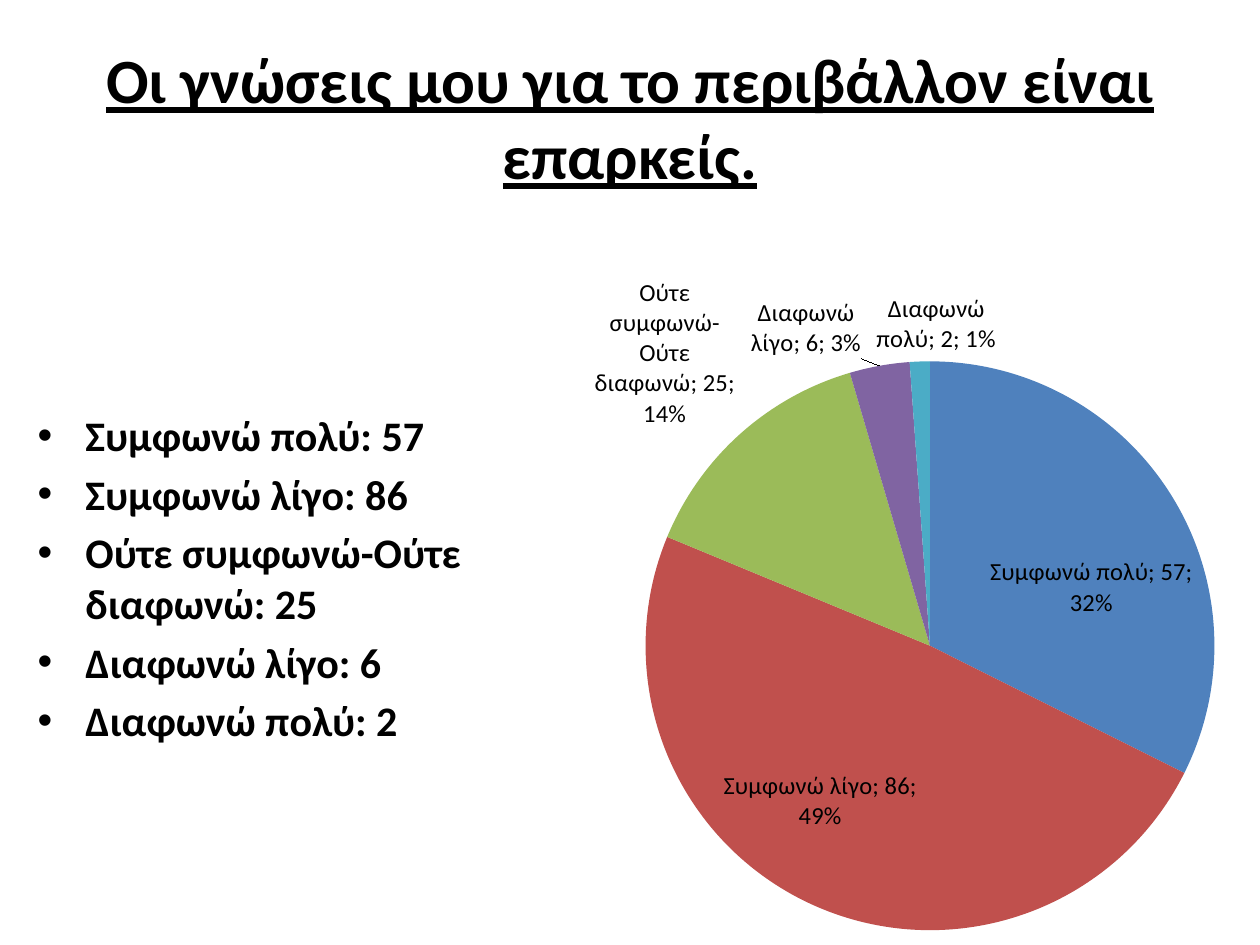
from dataclasses import dataclass

import pptx
import pptx.chart.data
import pptx.dml.color
import pptx.enum.chart
import pptx.enum.text
import pptx.oxml
import pptx.oxml.ns
import pptx.util
from pptx.util import Inches

FONT = "Calibri"
BLACK = "000000"
TITLE = "Οι γνώσεις μου για το περιβάλλον είναι επαρκείς."


@dataclass
class Answer:
    label: str
    count: int
    color: str


ANSWERS = [
    Answer("Συμφωνώ πολύ", 57, "4F81BD"),
    Answer("Συμφωνώ λίγο", 86, "C0504D"),
    Answer("Ούτε συμφωνώ-Ούτε διαφωνώ", 25, "9BBB59"),
    Answer("Διαφωνώ λίγο", 6, "8064A2"),
    Answer("Διαφωνώ πολύ", 2, "4BACC6"),
]


def rgb(color: str) -> pptx.dml.color.RGBColor:
    return pptx.dml.color.RGBColor.from_string(color)


def format_font(font, size: int, bold: bool = False) -> None:
    font.name = FONT
    font.size = pptx.util.Pt(size)
    font.bold = bold
    font.color.rgb = rgb(BLACK)


def add_title(slide) -> None:
    title = slide.shapes.title
    title.left, title.top = Inches(0.5), Inches(0.3)
    title.width, title.height = Inches(9), Inches(1.25)
    title.text_frame.text = TITLE
    title.text_frame.vertical_anchor = pptx.enum.text.MSO_ANCHOR.MIDDLE
    paragraph = title.text_frame.paragraphs[0]
    paragraph.alignment = pptx.enum.text.PP_ALIGN.CENTER
    font = paragraph.runs[0].font
    format_font(font, 36, bold=True)
    font.underline = True


def add_answer_list(slide, answers: list[Answer]) -> None:
    box = slide.shapes.add_textbox(Inches(0.2), Inches(3.2), Inches(4.11), Inches(3.18))
    text_frame = box.text_frame
    text_frame.word_wrap = True
    text_frame.text = "\n".join(f"{answer.label}: {answer.count}" for answer in answers)
    for paragraph in text_frame.paragraphs:
        paragraph.space_before = pptx.util.Pt(4.8)
        format_font(paragraph.runs[0].font, 24, bold=True)
        # Hanging bullet
        properties = paragraph._p.get_or_add_pPr()
        properties.set("marL", str(Inches(0.38)))
        properties.set("indent", str(-Inches(0.38)))
        for tag, name, value in (("a:buFont", "typeface", "Arial"), ("a:buChar", "char", "•")):
            bullet = pptx.oxml.parse_xml(f'<{tag} {pptx.oxml.ns.nsdecls("a")} {name}="{value}"/>')
            properties.append(bullet)


def set_plot_area(chart, x: float, y: float, width: float, height: float) -> None:
    """Fix the inner plot area, in fractions of the chart."""
    plot_area = chart._chartSpace.chart.plotArea
    for old_layout in plot_area.findall(pptx.oxml.ns.qn("c:layout")):
        plot_area.remove(old_layout)
    sizes = "".join(
        f'<c:{name} val="{value}"/>'
        for name, value in (("x", x), ("y", y), ("w", width), ("h", height))
    )
    plot_area.insert(0, pptx.oxml.parse_xml(
        f'<c:layout {pptx.oxml.ns.nsdecls("c")}><c:manualLayout>'
        '<c:layoutTarget val="inner"/><c:xMode val="edge"/><c:yMode val="edge"/>'
        f"{sizes}</c:manualLayout></c:layout>"
    ))


def add_answer_pie(slide, answers: list[Answer]) -> None:
    data = pptx.chart.data.CategoryChartData()
    data.categories = [answer.label for answer in answers]
    data.add_series("Series 1", [answer.count for answer in answers])
    chart = slide.shapes.add_chart(
        pptx.enum.chart.XL_CHART_TYPE.PIE,
        Inches(3.98), Inches(1.78), Inches(6.02), Inches(5.72), data,
    ).chart
    chart.has_legend = False
    chart.has_title = False
    format_font(chart.font, 10)
    set_plot_area(chart, 0.19, 0.19, 0.75, 0.79)

    # Slice colours
    plot = chart.plots[0]
    plot.vary_by_categories = True
    for index, answer in enumerate(answers):
        fill = plot.series[0].points[index].format.fill
        fill.solid()
        fill.fore_color.rgb = rgb(answer.color)

    # Labels: category; value; percentage
    labels = plot.series[0].data_labels
    labels.show_category_name = True
    labels.show_value = True
    labels.show_percentage = True
    labels.position = pptx.enum.chart.XL_LABEL_POSITION.BEST_FIT
    format_font(labels.font, 14)
    separator = pptx.oxml.parse_xml(
        f'<c:separator {pptx.oxml.ns.nsdecls("c")}>; </c:separator>'
    )
    labels._element.find(pptx.oxml.ns.qn("c:showBubbleSize")).addnext(separator)


def main() -> None:
    presentation = pptx.Presentation()
    presentation.slide_width, presentation.slide_height = Inches(10), Inches(7.5)
    slide = presentation.slides.add_slide(presentation.slide_layouts[5])
    add_title(slide)
    add_answer_list(slide, ANSWERS)
    add_answer_pie(slide, ANSWERS)
    presentation.save("out.pptx")


if __name__ == "__main__":
    main()
